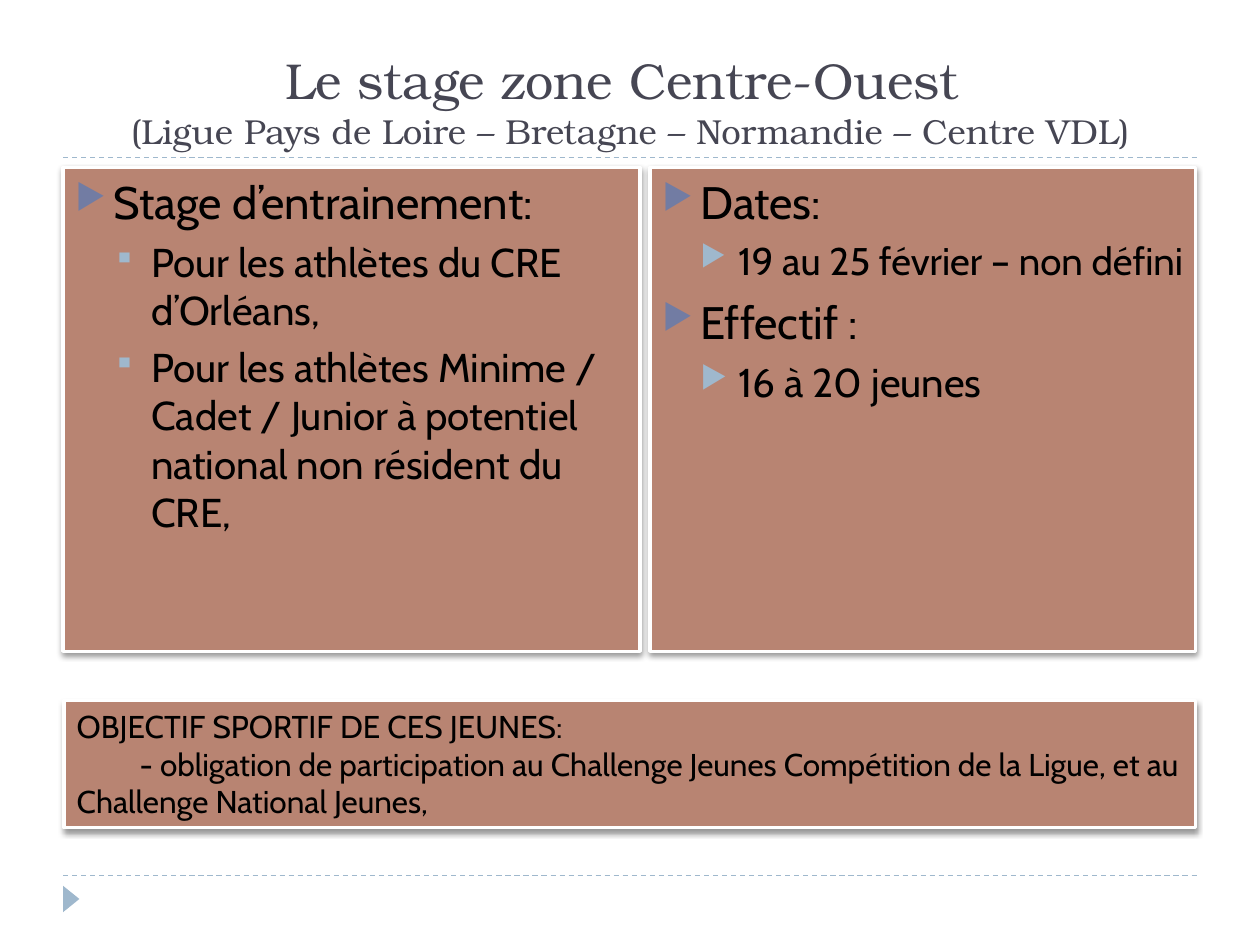
from lxml.etree import SubElement
from pptx import Presentation
from pptx.dml.color import RGBColor
from pptx.enum.dml import MSO_LINE
from pptx.enum.shapes import MSO_CONNECTOR, MSO_SHAPE
from pptx.enum.text import MSO_ANCHOR, PP_ALIGN
from pptx.oxml.ns import qn
from pptx.util import Inches, Pt

COLORS = {"title": "464653", "text": "000000", "panel": "B88472", "border": "FFFFFF",
          "main": "727CA3", "accent": "9FB8CD"}
RGB = {name: RGBColor.from_string(value) for name, value in COLORS.items()}

presentation = Presentation()
presentation.slide_width, presentation.slide_height = Inches(10), Inches(7.5)
slide = presentation.slides.add_slide(presentation.slide_layouts[5])
column, row = presentation.slide_width // 20, presentation.slide_height // 30


def add_run(paragraph, text, size, font="Cabin", color="text"):
    run = paragraph.add_run()
    run.text = text
    run.font.size, run.font.name = Pt(size), font
    run.font.color.rgb = RGB[color]


def add_panel(left, top, width, height):
    panel = slide.shapes.add_shape(MSO_SHAPE.RECTANGLE, left, top, width, height)
    panel.fill.solid()
    panel.fill.fore_color.rgb = RGB["panel"]
    panel.line.color.rgb = RGB["border"]
    panel.line.width = Pt(2)
    panel.shadow.inherit = False
    effects = panel._element.spPr.find(qn("a:effectLst"))
    shadow = SubElement(effects, qn("a:outerShdw"), blurRad=str(Pt(3)), dist=str(Pt(2)),
                        dir="5400000", rotWithShape="0")
    shade = SubElement(shadow, qn("a:srgbClr"), val=COLORS["text"])
    SubElement(shade, qn("a:alpha"), val="40000")
    panel.text_frame.word_wrap = True
    panel.text_frame.vertical_anchor = MSO_ANCHOR.TOP
    return panel.text_frame


for line_row in (27.8, 5):
    y = int(line_row * row)
    rule = slide.shapes.add_connector(MSO_CONNECTOR.STRAIGHT, column, y, 19 * column, y)
    rule.line.color.rgb = RGB["accent"]
    rule.line.width = Pt(0.75)
    rule.line.dash_style = MSO_LINE.DASH
    SubElement(rule._element.spPr, qn("a:effectLst"))

marker = slide.shapes.add_shape(MSO_SHAPE.ISOSCELES_TRIANGLE, Inches(0.46), Inches(7.07),
                                Inches(0.21), Inches(0.13))
marker.rotation = 90
marker.shadow.inherit = False
marker.fill.solid()
marker.fill.fore_color.rgb = RGB["accent"]
marker.line.fill.background()

title = slide.shapes.title
title.left, title.top, title.width, title.height = column, row, 18 * column, 4 * row
title.text_frame.word_wrap = True
title.text_frame.vertical_anchor = MSO_ANCHOR.BOTTOM
heading = title.text_frame.paragraphs[0]
heading.alignment = PP_ALIGN.CENTER
add_run(heading, "Le stage zone Centre-Ouest ", 28.8, "TeX Gyre Bonum", "title")
heading.add_line_break()
add_run(heading, "(Ligue Pays de Loire – Bretagne – Normandie – Centre VDL)", 19.8,
        "TeX Gyre Bonum", "title")

panels = [
    (0.5, 4.58, [
        (0, "▶", 26, "Stage d’entrainement:"),
        (1, "▪", 23, "Pour les athlètes du CRE d’Orléans,"),
        (1, "▪", 23, "Pour les athlètes Minime / Cadet / Junior à potentiel national "
                     "non résident du CRE,"),
    ]),
    (5.16, 4.33, [
        (0, "▶", 26, "Dates:"),
        (1, "▶", 22, "19 au 25 février – non défini"),
        (0, "▶", 26, "Effectif :"),
        (1, "▶", 23, "16 à 20 jeunes"),
    ]),
]
for left, width, items in panels:
    frame = add_panel(Inches(left), Inches(1.33), Inches(width), Inches(3.84))
    for index, (level, bullet, size, text) in enumerate(items):
        paragraph = frame.add_paragraph() if index else frame.paragraphs[0]
        paragraph.alignment = PP_ALIGN.LEFT
        paragraph.level = level
        paragraph.space_before = Pt(6 - level)
        properties = paragraph._p.get_or_add_pPr()
        properties.set("marL", str(Inches(0.3) * (level + 1)))
        properties.set("indent", str(-Inches(0.3)))
        bullet_color = SubElement(properties, qn("a:buClr"))
        SubElement(bullet_color, qn("a:srgbClr"), val=COLORS["accent" if level else "main"])
        SubElement(properties, qn("a:buSzPct"), val="76000")
        SubElement(properties, qn("a:buChar"), char=bullet)
        add_run(paragraph, text, size)

goals = [
    "OBJECTIF SPORTIF DE CES JEUNES:",
    "\t- obligation de participation au Challenge Jeunes Compétition de la Ligue, "
    "et au Challenge National Jeunes,",
]
frame = add_panel(Inches(0.51), Inches(5.56), Inches(8.98), Inches(1.01))
for index, text in enumerate(goals):
    paragraph = frame.add_paragraph() if index else frame.paragraphs[0]
    paragraph.alignment = PP_ALIGN.LEFT
    add_run(paragraph, text, 18)

presentation.save("out.pptx")
